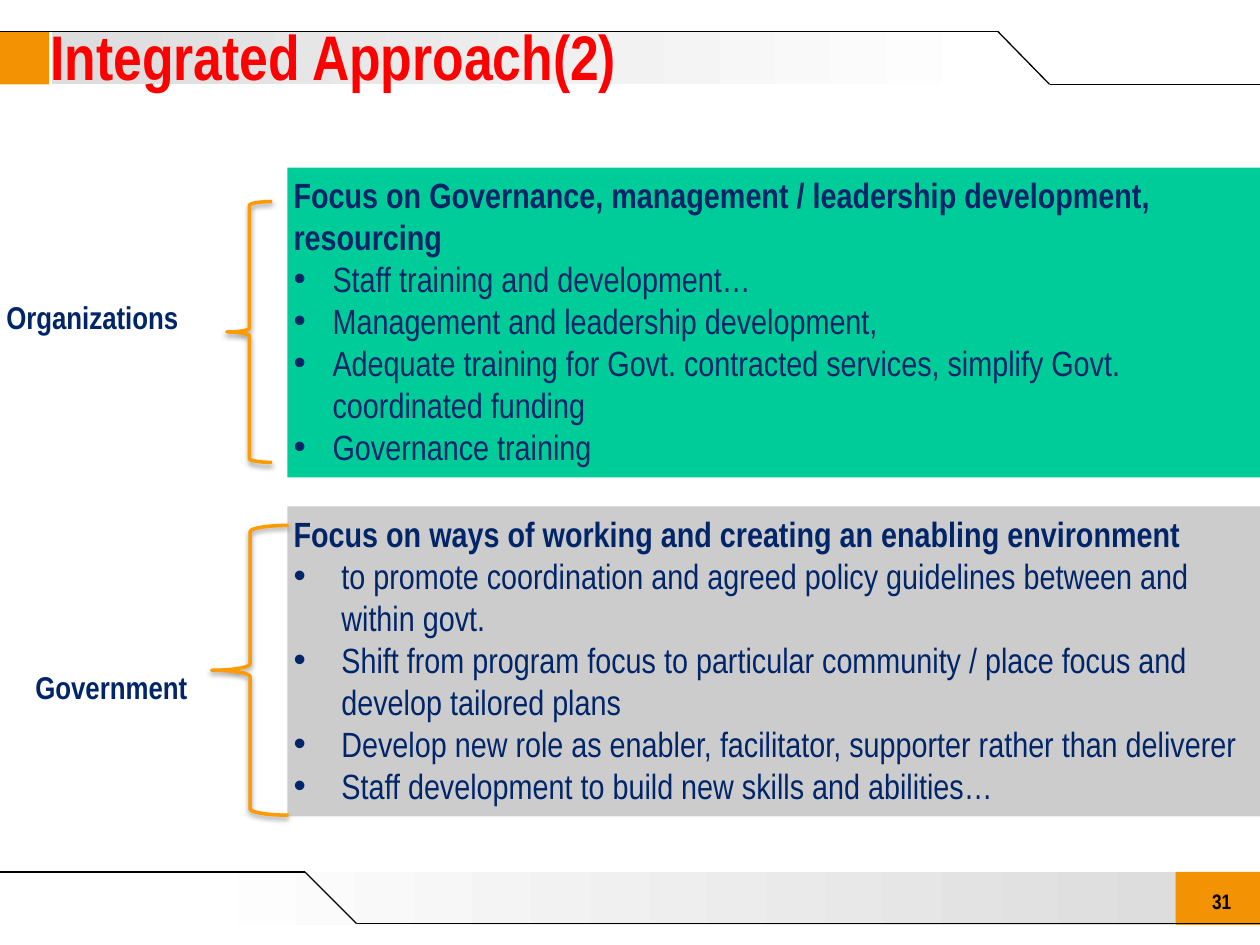
from dataclasses import dataclass

from lxml import etree
from pptx import Presentation
from pptx.dml.color import RGBColor
from pptx.enum.shapes import MSO_CONNECTOR, MSO_SHAPE
from pptx.enum.text import MSO_ANCHOR, MSO_AUTO_SIZE, PP_ALIGN
from pptx.oxml import parse_xml
from pptx.oxml.ns import nsdecls, qn
from pptx.shapes.autoshape import Shape
from pptx.slide import Slide
from pptx.text.text import TextFrame, _Paragraph
from pptx.util import Inches, Pt


@dataclass(frozen=True)
class Theme:
    font: str = "Arial Narrow"
    navy: str = "002569"
    red: str = "FF0000"
    black: str = "000000"
    white: str = "FFFFFF"
    silver: str = "DDDDDD"
    orange: str = "F39203"
    brace: str = "FF9A00"
    green: str = "00CC99"
    grey: str = "CCCCCC"
    title: int = 36
    body: int = 20
    label: int = 18
    number: int = 12


@dataclass(frozen=True)
class Area:
    left: float
    top: float
    width: float
    height: float

    def lengths(self) -> tuple[Inches, ...]:
        return tuple(Inches(v) for v in (self.left, self.top, self.width, self.height))


@dataclass(frozen=True)
class Label:
    text: str
    area: Area
    size: int
    color: str
    wrap: bool = True
    align: PP_ALIGN = PP_ALIGN.LEFT
    side_inset: float = 0.05


@dataclass(frozen=True)
class Focus:
    area: Area
    fill: str
    heading: str
    points: tuple[str, ...]
    indent: float


THEME = Theme()
BAND_HEIGHT = 0.42
HEADER_TOP, HEADER_BOTTOM = 0.25, 0.67
FOOTER_TOP, FOOTER_BOTTOM = 6.92, 7.33

GRADIENT_BANDS = (
    (Area(1.42, FOOTER_TOP, 7.92, BAND_HEIGHT), (THEME.white, THEME.silver)),
    (Area(0.41, HEADER_TOP, 7.51, BAND_HEIGHT), (THEME.silver, THEME.white)),
)
ORANGE_BLOCKS = (
    Area(9.33, FOOTER_TOP, 0.67, BAND_HEIGHT),
    Area(0, HEADER_TOP, 0.39, BAND_HEIGHT),
)
RULES = (
    ((0, HEADER_TOP), (7.92, HEADER_TOP), (8.33, HEADER_BOTTOM), (10, HEADER_BOTTOM)),
    ((0, FOOTER_TOP), (2.42, FOOTER_TOP), (2.83, FOOTER_BOTTOM), (10, FOOTER_BOTTOM)),
)
LABELS = (
    Label("31", Area(9.42, 7, 0.45, 0.3), THEME.number, THEME.black,
          align=PP_ALIGN.RIGHT, side_inset=0.1),
    Label("Integrated Approach(2)", Area(0.35, 0.09, 4.64, 0.71), THEME.title, THEME.red, wrap=False),
    Label("Organizations", Area(0, 2.32, 1.86, 0.4), THEME.label, THEME.navy),
    Label("Government", Area(0.23, 5.25, 2.05, 0.4), THEME.label, THEME.navy),
)
FOCUSES = (
    Focus(
        Area(2.28, 1.33, 7.72, 2.46), THEME.green,
        "Focus on Governance, management / leadership development, resourcing",
        (
            "Staff training and development…",
            "Management and leadership development,",
            "Adequate training for Govt. contracted services, simplify Govt. coordinated funding",
            "Governance training",
        ),
        0.31,
    ),
    Focus(
        Area(2.28, 4.02, 7.72, 2.46), THEME.grey,
        "Focus on ways of working and creating an enabling environment",
        (
            "to promote coordination and agreed policy guidelines between and within govt.",
            "Shift from program focus to particular community / place focus and develop tailored plans",
            "Develop new role as enabler, facilitator, supporter rather than deliverer",
            "Staff development to build new skills and abilities…",
        ),
        0.38,
    ),
)
BRACES = (Area(1.8, 1.6, 0.36, 2.07), Area(1.68, 4.17, 0.61, 2.3))


def rgb(color: str) -> RGBColor:
    """Turn a hex value into a colour."""
    return RGBColor.from_string(color)


def add_block(slide: Slide, area: Area, fill: str) -> Shape:
    """Draw a borderless rectangle in one colour."""
    block = slide.shapes.add_shape(MSO_SHAPE.RECTANGLE, *area.lengths())
    block.shadow.inherit = False
    block.fill.solid()
    block.fill.fore_color.rgb = rgb(fill)
    block.line.fill.background()
    return block


def add_gradient(slide: Slide, area: Area, colors: tuple[str, str]) -> None:
    """Draw a band that fades from left to right."""
    fill = add_block(slide, area, colors[0]).fill
    fill.gradient()
    fill.gradient_angle = 0
    for position, (stop, color) in enumerate(zip(fill.gradient_stops, colors)):
        stop.position = position
        stop.color.rgb = rgb(color)


def add_rule(slide: Slide, points: tuple[tuple[float, float], ...]) -> None:
    """Draw a stepped rule as a chain of connectors."""
    for start, end in zip(points, points[1:]):
        ends = [Inches(v) for v in (*start, *end)]
        segment = slide.shapes.add_connector(MSO_CONNECTOR.STRAIGHT, *ends)
        segment.line.color.rgb = rgb(THEME.black)
        segment.line.width = Pt(0.75)
        etree.SubElement(segment._element.spPr, qn("a:effectLst"))


def set_frame(frame: TextFrame, side_inset: float = 0.05, wrap: bool = True) -> None:
    """Set insets, wrapping and anchor of a text frame."""
    frame.margin_left = frame.margin_right = Inches(side_inset)
    frame.margin_top = frame.margin_bottom = Inches(0.05)
    frame.word_wrap = wrap
    frame.auto_size = MSO_AUTO_SIZE.SHAPE_TO_FIT_TEXT
    frame.vertical_anchor = MSO_ANCHOR.TOP


def add_run(paragraph: _Paragraph, text: str, size: int, color: str, bold: bool = True) -> None:
    """Add one formatted run."""
    run = paragraph.add_run()
    run.text = text
    run.font.name = THEME.font
    run.font.size = Pt(size)
    run.font.bold = bold
    run.font.color.rgb = rgb(color)


def add_label(slide: Slide, label: Label) -> None:
    """Draw a single-line text box."""
    frame = slide.shapes.add_textbox(*label.area.lengths()).text_frame
    set_frame(frame, label.side_inset, label.wrap)
    paragraph = frame.paragraphs[0]
    paragraph.alignment = label.align
    add_run(paragraph, label.text, label.size, label.color)


def add_focus(slide: Slide, focus: Focus) -> None:
    """Draw a coloured panel with a heading and bullets."""
    frame = add_block(slide, focus.area, focus.fill).text_frame
    set_frame(frame)
    heading = frame.paragraphs[0]
    heading.alignment = PP_ALIGN.LEFT
    add_run(heading, focus.heading, THEME.body, THEME.navy)
    for point in focus.points:
        paragraph = frame.add_paragraph()
        paragraph.alignment = PP_ALIGN.LEFT
        properties = paragraph._p.get_or_add_pPr()
        properties.set("marL", str(Inches(focus.indent)))
        properties.set("indent", str(-Inches(focus.indent)))
        etree.SubElement(properties, qn("a:buFont")).set("typeface", "Arial")
        etree.SubElement(properties, qn("a:buChar")).set("char", "•")
        add_run(paragraph, point, THEME.body, THEME.navy, bold=False)


def add_brace(slide: Slide, area: Area) -> None:
    """Draw a left brace with a soft shadow below it."""
    brace = slide.shapes.add_shape(MSO_SHAPE.LEFT_BRACE, *area.lengths())
    brace.fill.background()
    brace.line.color.rgb = rgb(THEME.brace)
    brace.line.width = Pt(2)
    brace._element.spPr.append(parse_xml(
        f'<a:effectLst {nsdecls("a")}><a:outerShdw blurRad="{Pt(3)}" dist="{Pt(1.6)}" '
        f'dir="5400000" rotWithShape="0"><a:srgbClr val="{THEME.black}">'
        '<a:alpha val="38000"/></a:srgbClr></a:outerShdw></a:effectLst>'))


def main() -> None:
    """Build and save the slide."""
    deck = Presentation()
    deck.slide_width, deck.slide_height = Inches(10), Inches(7.5)
    slide = deck.slides.add_slide(deck.slide_layouts[6])
    for area, colors in GRADIENT_BANDS:
        add_gradient(slide, area, colors)
    for area in ORANGE_BLOCKS:
        add_block(slide, area, THEME.orange)
    for points in RULES:
        add_rule(slide, points)
    for label in LABELS:
        add_label(slide, label)
    for focus in FOCUSES:
        add_focus(slide, focus)
    for area in BRACES:
        add_brace(slide, area)
    deck.save("out.pptx")


if __name__ == "__main__":
    main()
